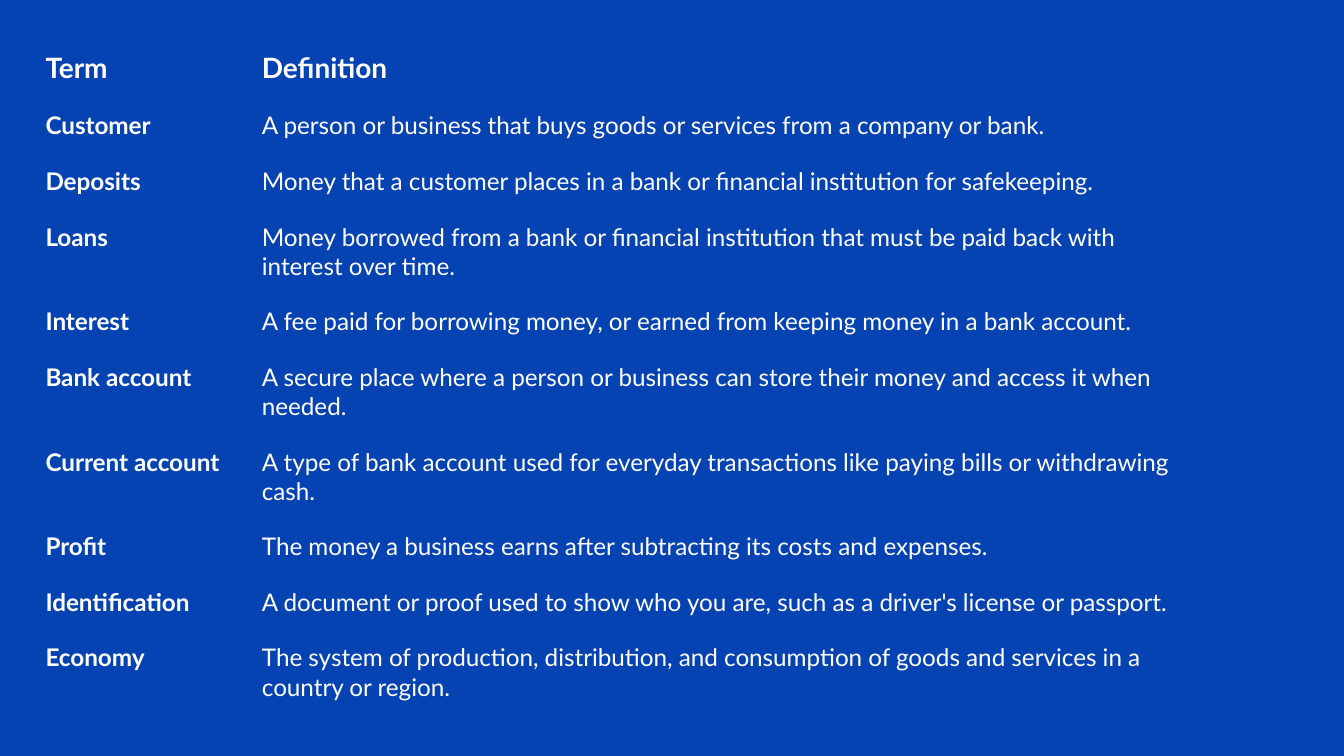
from dataclasses import dataclass

from pptx import Presentation
from pptx.dml.color import RGBColor
from pptx.util import Cm, Pt


@dataclass(frozen=True)
class Theme:
    background: RGBColor = RGBColor(0x05, 0x43, 0xB3)
    text: RGBColor = RGBColor(0xFF, 0xFF, 0xFF)
    font: str = "Lato"
    heading_size: Pt = Pt(15)
    body_size: Pt = Pt(13)


THEME = Theme()
PLAIN_TABLE_STYLE = "{2D5ABB26-0587-4C30-8999-92F81FD0307C}"  # no fill, no grid

HEADINGS = ("Term", "Definition")
GLOSSARY = [
    ("Customer", "A person or business that buys goods or services from a company or bank."),
    ("Deposits", "Money that a customer places in a bank or financial institution for safekeeping."),
    ("Loans", "Money borrowed from a bank or financial institution that must be paid back with interest over time."),
    ("Interest", "A fee paid for borrowing money, or earned from keeping money in a bank account."),
    ("Bank account", "A secure place where a person or business can store their money and access it when needed."),
    ("Current account", "A type of bank account used for everyday transactions like paying bills or withdrawing cash."),
    ("Profit", "The money a business earns after subtracting its costs and expenses."),
    ("Identification", "A document or proof used to show who you are, such as a driver's license or passport."),
    ("Economy", "The system of production, distribution, and consumption of goods and services in a country or region."),
]


def write_text(text_frame, text, *, size=THEME.body_size, bold=False, color=THEME.text):
    run = text_frame.paragraphs[0].add_run()
    run.text = text
    run.font.name = THEME.font
    run.font.size = size
    run.font.bold = bold
    run.font.color.rgb = color


def add_glossary(slide, left, top, width, height, term_width):
    """Place the term and definition table; rows grow to fit their text."""
    entries = [HEADINGS, *GLOSSARY]
    frame = slide.shapes.add_table(len(entries), len(HEADINGS), left, top, width, height)
    glossary = frame.table
    glossary.horz_banding = False
    glossary.first_row = False
    glossary._tbl.tblPr.find("{*}tableStyleId").text = PLAIN_TABLE_STYLE
    glossary.columns[0].width = term_width
    glossary.columns[1].width = width - term_width

    for row, entry in enumerate(entries):
        is_heading = row == 0
        for column, text in enumerate(entry):
            cell = glossary.cell(row, column)
            cell.fill.background()
            cell.margin_left = cell.margin_right = Cm(0.25)
            cell.margin_top = cell.margin_bottom = Cm(0.25)
            write_text(
                cell.text_frame,
                text,
                size=THEME.heading_size if is_heading else THEME.body_size,
                bold=is_heading or column == 0,
            )


def main():
    presentation = Presentation()
    presentation.slide_width = Cm(25.4)
    presentation.slide_height = Cm(14.29)
    slide = presentation.slides.add_slide(presentation.slide_layouts[6])
    slide.background.fill.solid()
    slide.background.fill.fore_color.rgb = THEME.background
    add_glossary(slide, Cm(0.61), Cm(0.71), Cm(22.07), Cm(5.3), term_width=Cm(4.09))
    presentation.save("out.pptx")


if __name__ == "__main__":
    main()
